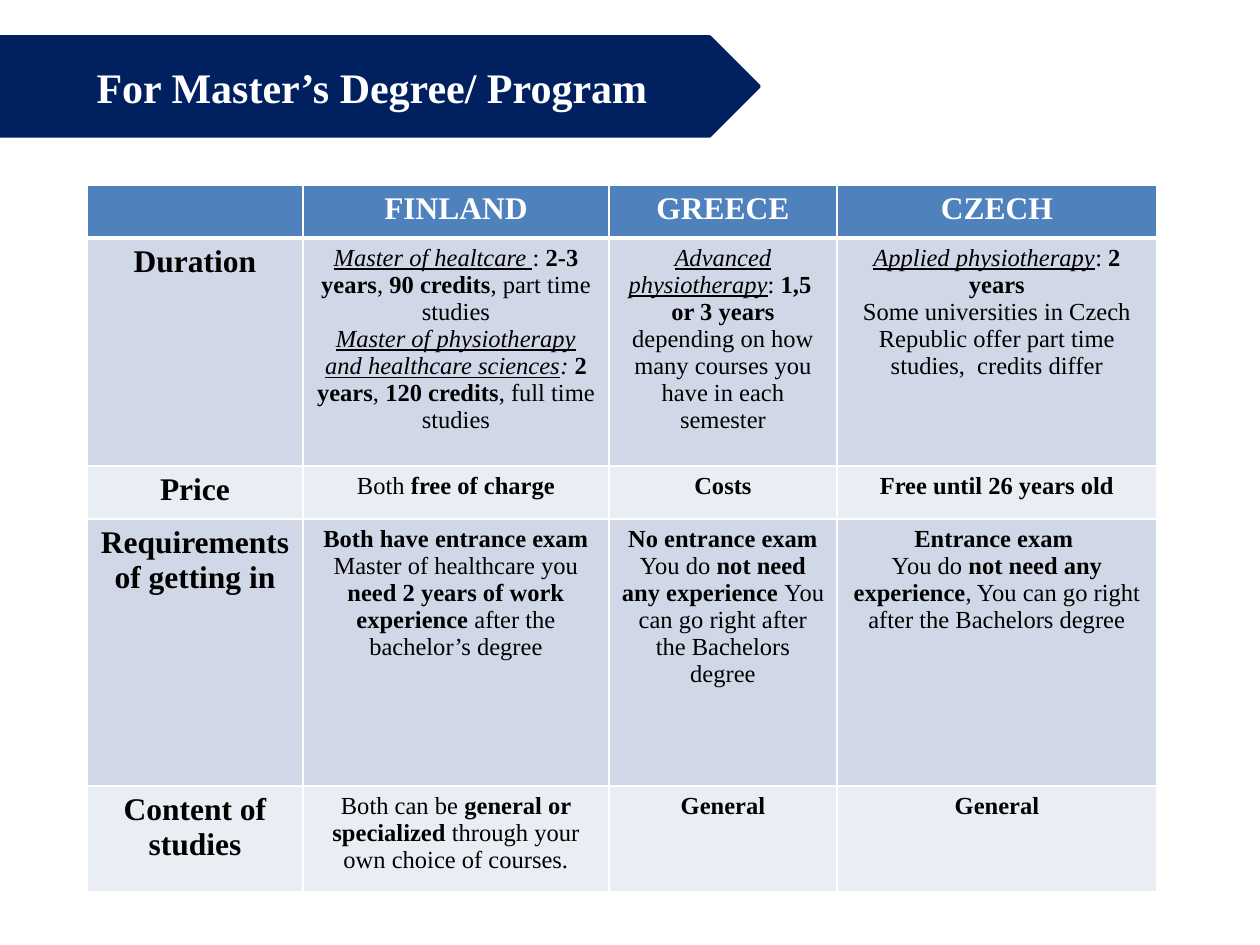
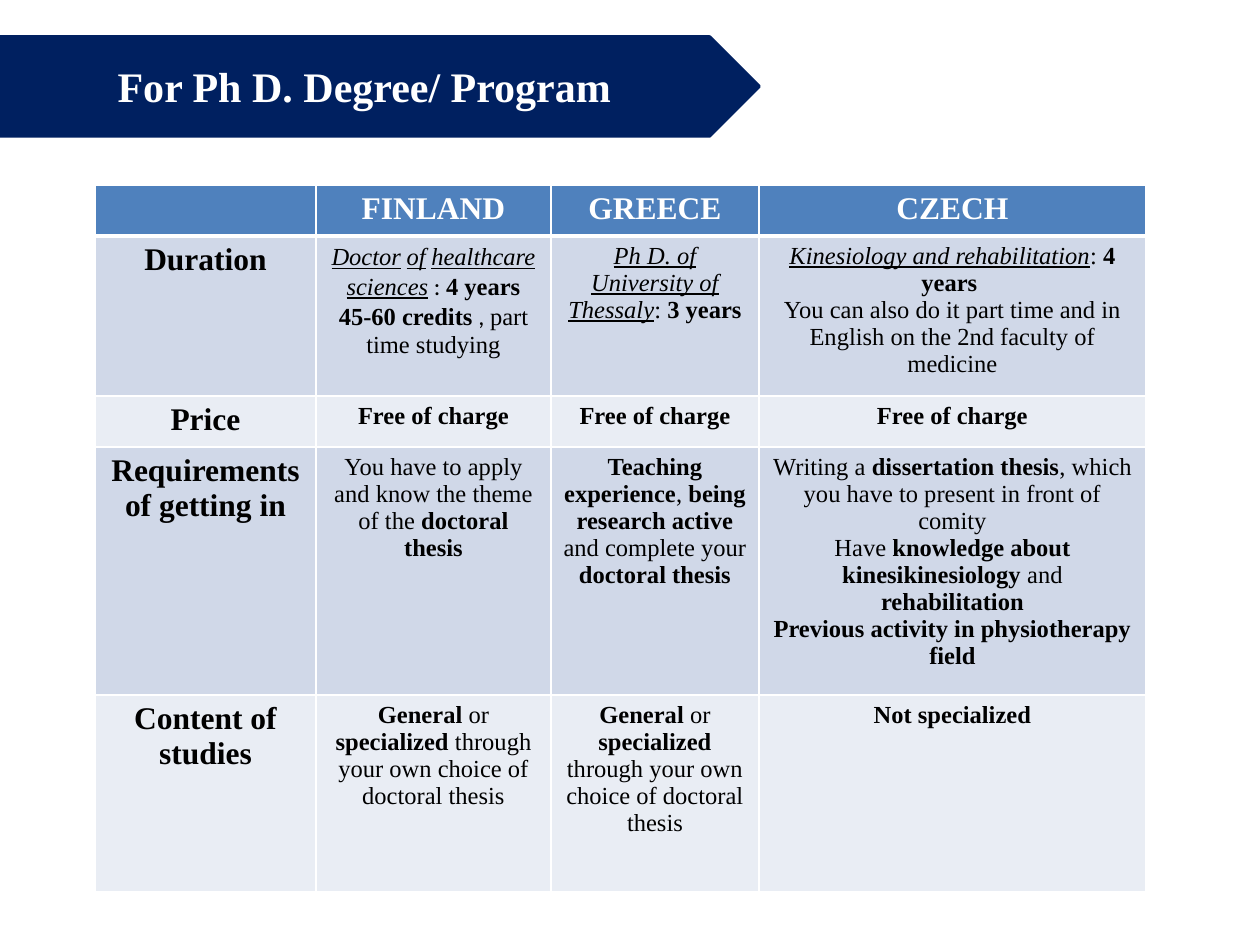
import dataclasses

import lxml.etree
import pptx
import pptx.dml.color
import pptx.enum.shapes
import pptx.enum.text
import pptx.oxml.ns
import pptx.util

SCALE = 914400 / 126


def rgb(code):
    return pptx.dml.color.RGBColor.from_string(code)


@dataclasses.dataclass(frozen=True)
class Theme:
    navy = rgb("002060")
    blue = rgb("4F81BD")
    dark = rgb("D0D8E8")
    light = rgb("E9EDF4")
    white = rgb("FFFFFF")
    black = rgb("000000")
    font = "Times New Roman"
    spare = "Calibri"
    title = 24
    head = 18
    body = 14


THEME = Theme()
LANDS = ["", "FINLAND", "GREECE", "CZECH"]
TOPICS = ["Duration", "Price", "Requirements of getting in", "Content of studies"]

# "|" parts runs; a run may open with a mark:
# "*" bold, "_" underlined italic, "~" italic, "^" spare font.
MASTER = [
    ["_Master of healtcare |: |*2-3 years|, |*90 credits|, part time studies\n"
     "_Master of physiotherapy and healthcare sciences|~: |*2 years|, "
     "|*120 credits|, full time studies",
     "_Advanced physiotherapy|: |*1,5  or 3 years "
     "|depending on how many courses you have in each semester",
     "_Applied physiotherapy|: |*2 years\n"
     "Some universities in Czech Republic offer part time studies,  credits differ"],
    ["Both |*free of charge", "*Costs", "*Free until 26 years old"],
    ["*Both have entrance exam\nMaster of healthcare you "
     "|*need 2 years of work experience| after the bachelor’s degree",
     "*No entrance exam\nYou do |*not need any experience "
     "|You can go right after the Bachelors degree",
     "*Entrance exam \nYou do |*not need any experience"
     "|, You can go right after the Bachelors degree"],
    ["Both can be |*general or specialized| through your own choice of courses.",
     "*General", "*General"],
]

THESIS = "*General| or |*specialized| through your own choice of doctoral thesis"
DOCTOR = [
    ["_Doctor|^ |_of|^ |_healthcare|^ |_sciences|^ : "
     "|*4 years 45-60 credits|^ , |part time studying",
     "_Ph D. of University of Thessaly|: |*3 years",
     "_Kinesiology and rehabilitation|: |*4 years \n"
     "You can also do it part time and in English on the 2nd faculty of medicine"],
    ["*Free of charge"] * 3,
    ["You have to apply and know the theme of the |*doctoral thesis",
     "*Teaching experience|, |*being research active "
     "|and complete your |*doctoral thesis",
     "Writing a |*dissertation thesis|, which you have to present in front of comity\n"
     "Have |*knowledge about kinesikinesiology |and |*rehabilitation\n"
     "*Previous activity in physiotherapy field"],
    [THESIS, THESIS, "*Not specialized"],
]


def px(num):
    return pptx.util.Emu(round(num * SCALE))


def style(para, size, color, bold=None):
    font = para.font
    font.name = THEME.font
    font.size = pptx.util.Pt(size)
    font.color.rgb = color
    font.bold = bold


def add_band(slide):
    """Put the navy arrow band behind the title."""
    band = slide.shapes.add_shape(
        pptx.enum.shapes.MSO_SHAPE.PENTAGON, px(-15), px(37), px(774), px(99))
    band.shadow.inherit = False
    band.fill.solid()
    band.fill.fore_color.rgb = THEME.navy
    band.line.color.rgb = THEME.navy
    band.line.width = pptx.util.Pt(2)
    slide.shapes.title.element.addprevious(band.element)


def set_title(slide, text, left, top, width):
    title = slide.shapes.title
    title.left, title.top, title.width, title.height = map(px, (left, top, width, 63))
    frame = title.text_frame
    frame.text = text
    frame.word_wrap = True
    frame.auto_size = pptx.enum.text.MSO_AUTO_SIZE.SHAPE_TO_FIT_TEXT
    frame.vertical_anchor = pptx.enum.text.MSO_ANCHOR.TOP
    para = frame.paragraphs[0]
    para.alignment = pptx.enum.text.PP_ALIGN.LEFT
    style(para, THEME.title, THEME.white, True)


def set_edges(cell, top, low):
    """Draw white cell borders; top and low are widths in points."""
    props = cell._tc.get_or_add_tcPr()
    for side, width in zip("LRTB", (1, 1, top, low)):
        line = lxml.etree.SubElement(
            props, pptx.oxml.ns.qn(f"a:ln{side}"), w=str(pptx.util.Pt(width)))
        fill = lxml.etree.SubElement(line, pptx.oxml.ns.qn("a:solidFill"))
        lxml.etree.SubElement(
            fill, pptx.oxml.ns.qn("a:srgbClr"), val=str(THEME.white))


def add_run(para, piece):
    mark = piece[0] if piece[0] in "*_~^" else ""
    run = para.add_run()
    run.text = piece[len(mark):]
    if mark == "*":
        run.font.bold = True
    elif mark == "^":
        run.font.name = THEME.spare
    elif mark:
        run.font.italic = True
        run.font.underline = True if mark == "_" else None


def fill_cell(cell, text, row, col):
    head = row == 0
    label = head or col == 0
    set_edges(cell, 3 if row == 1 else 1, 3 if head else 1)
    cell.fill.solid()
    cell.fill.fore_color.rgb = (
        THEME.blue if head else THEME.dark if row % 2 else THEME.light)
    frame = cell.text_frame
    for num, part in enumerate(text.split("\n")):
        para = frame.add_paragraph() if num else frame.paragraphs[0]
        para.alignment = pptx.enum.text.PP_ALIGN.CENTER
        style(para, THEME.head if label else THEME.body,
              THEME.white if head else THEME.black, label)
        for piece in filter(None, part.split("|")):
            add_run(para, piece)


def add_grid(slide, left, cols, rows, facts):
    lines = [LANDS] + [[topic, *cells] for topic, cells in zip(TOPICS, facts)]
    grid = slide.shapes.add_table(
        len(rows), len(cols), px(left), px(185), px(sum(cols)), px(sum(rows))).table
    grid.horz_banding = False
    for col, width in zip(grid.columns, cols):
        col.width = px(width)
    for row, height in zip(grid.rows, rows):
        row.height = px(height)
    for row, line in enumerate(lines):
        for col, text in enumerate(line):
            fill_cell(grid.cell(row, col), text, row, col)


def add_page(deck, title, spot, left, cols, rows, facts):
    slide = deck.slides.add_slide(deck.slide_layouts[5])
    add_band(slide)
    set_title(slide, title, *spot)
    add_grid(slide, left, cols, rows, facts)


def main():
    deck = pptx.Presentation()
    deck.slide_width, deck.slide_height = px(1260), px(945)
    add_page(deck, "For Master’s Degree/ Program", (84, 55, 665),
             87, (216, 306, 228, 320), (53, 228, 53, 267, 106), MASTER)
    add_page(deck, "For Ph D. Degree/ Program", (105, 54, 546),
             95, (221, 235, 208, 387), (51, 160, 51, 248, 197), DOCTOR)
    deck.save("out.pptx")


if __name__ == "__main__":
    main()
